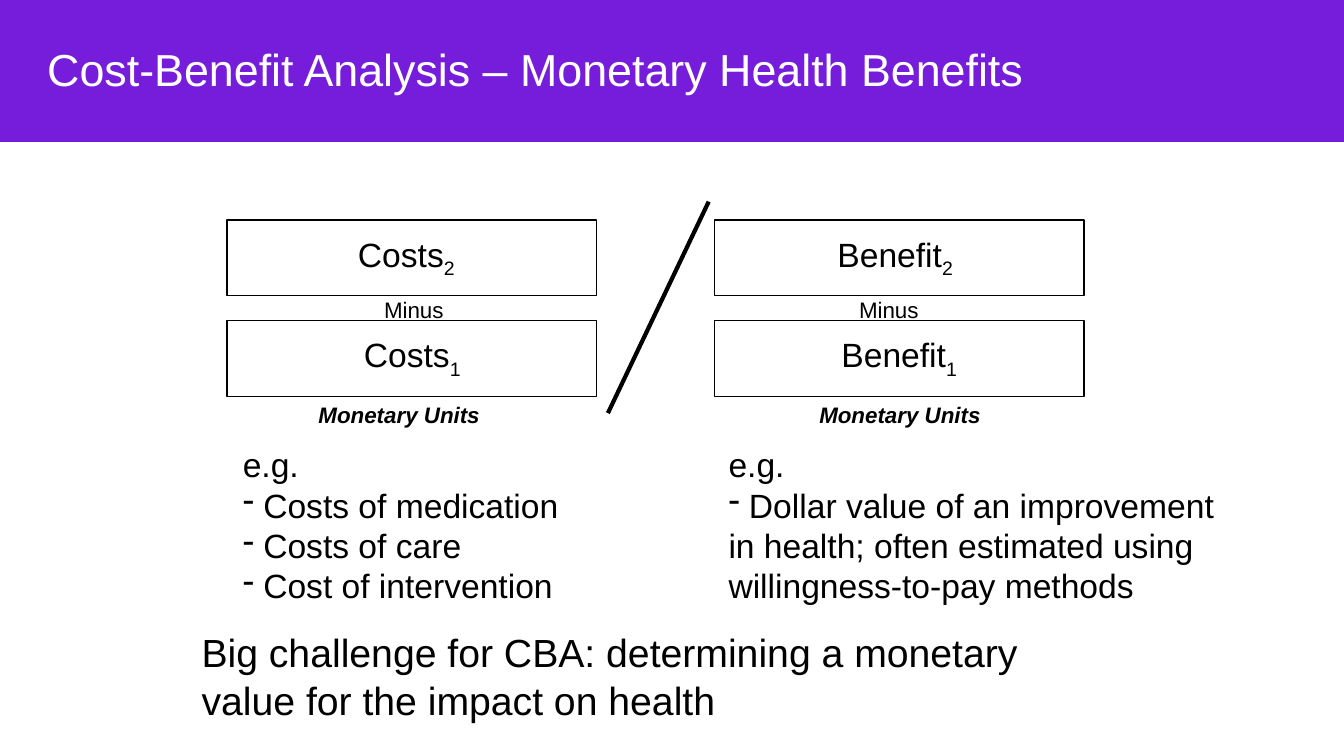
"""Build the slide on cost-benefit analysis with monetary health benefits."""
import pptx
import pptx.dml.color
import pptx.enum.shapes
import pptx.enum.text
import pptx.oxml
import pptx.util
from lxml import etree

Cm, Pt = pptx.util.Cm, pptx.util.Pt
PP_ALIGN = pptx.enum.text.PP_ALIGN
ANCHOR = pptx.enum.text.MSO_ANCHOR
RECT = pptx.enum.shapes.MSO_SHAPE.RECTANGLE
STRAIGHT = pptx.enum.shapes.MSO_CONNECTOR.STRAIGHT

COLORS = {"band": "751DDB", "title": "FFFFFF", "ink": "000000"}
TITLE = "Cost-Benefit Analysis – Monetary Health Benefits"
CHALLENGE = "Big challenge for CBA: determining a monetary value for the impact on health"
COLUMNS = [
    {
        "left": 5.72,
        "term": "Costs",
        "centers": {"2": 10.24, "1": 10.39, "minus": 10.43, "units": 10.06},
        "list": (5.87, 9),
        "examples": ["Costs of medication", "Costs of care", "Cost of intervention"],
    },
    {
        "left": 18,
        "term": "Benefit",
        "centers": {"2": 22.56, "1": 22.66, "minus": 22.4, "units": 22.68},
        "list": (18.11, 12.9),
        "examples": ["Dollar value of an improvement in health; often estimated "
                     "using willingness-to-pay methods"],
    },
]
BOX_TOPS = {"2": 5.54, "1": 8.08}
BOX_W, BOX_H = 9.32, 1.91
LABEL_DROP, LABEL_H = 0.22, 1.27
CAPTION_W, CAPTION_H = 7.62, 0.94
CAPTIONS = [("minus", "Minus", 7.34, {}),
            ("units", "Monetary Units", 9.98, {"bold": True, "italic": True})]
LIST_TOP, LIST_H = 11.07, 4.37


def color(name):
    return pptx.dml.color.RGBColor.from_string(COLORS[name])


def write(p, text, size, ink="ink", **fmt):
    r = p.add_run()
    r.text = text
    for key, value in {"name": "Arial", "size": Pt(size), **fmt}.items():
        setattr(r.font, key, value)
    r.font.color.rgb = color(ink)
    return r


def add_text(s, left, top, width, height, align=PP_ALIGN.LEFT):
    tf = s.shapes.add_textbox(Cm(left), Cm(top), Cm(width), Cm(height)).text_frame
    tf.word_wrap = True
    tf.paragraphs[0].alignment = align
    return tf


def add_box(s, left, top, width, height, fill=None):
    sp = s.shapes.add_shape(RECT, Cm(left), Cm(top), Cm(width), Cm(height))
    sp.shadow.inherit = False
    if fill:
        sp.fill.solid()
        sp.fill.fore_color.rgb = color(fill)
        sp.line.fill.background()
    else:
        sp.fill.background()
        sp.line.color.rgb = color("ink")
        sp.line.width = Pt(1)
    return sp


def add_title(s, width):
    title = s.shapes.title
    title.element.addprevious(add_box(s, 0, 0, width, 3.58, "band").element)
    place = {"left": 1.19, "top": 0.36, "width": 31.09, "height": 2.9}
    for key, value in place.items():
        setattr(title, key, Cm(value))
    tf = title.text_frame
    frame = dict.fromkeys(("margin_left", "margin_top", "margin_right", "margin_bottom"), 0)
    for key, value in {**frame, "vertical_anchor": ANCHOR.MIDDLE, "word_wrap": True}.items():
        setattr(tf, key, value)
    p = tf.paragraphs[0]
    p.alignment, p.line_spacing = PP_ALIGN.LEFT, 0.9
    write(p, TITLE, 32, "title")


def add_column(s, column):
    centers = column["centers"]
    for index, top in BOX_TOPS.items():
        add_box(s, column["left"], top, BOX_W, BOX_H)
        tf = add_text(s, centers[index] - CAPTION_W / 2, top + LABEL_DROP,
                      CAPTION_W, LABEL_H, PP_ALIGN.CENTER)
        write(tf.paragraphs[0], column["term"], 24)
        r = write(tf.paragraphs[0], index, 24)
        r.font.element.set("baseline", "-25000") if hasattr(r.font, "element") else \
            r._r.get_or_add_rPr().set("baseline", "-25000")
    for key, text, top, fmt in CAPTIONS:
        tf = add_text(s, centers[key] - CAPTION_W / 2, top,
                      CAPTION_W, CAPTION_H, PP_ALIGN.CENTER)
        write(tf.paragraphs[0], text, 16, **fmt)
    left, width = column["list"]
    tf = add_text(s, left, LIST_TOP, width, LIST_H)
    write(tf.paragraphs[0], "e.g.", 24)
    for example in column["examples"]:
        p = tf.add_paragraph()
        write(p, " " + example, 24)
        pPr = p._p.get_or_add_pPr()
        etree.SubElement(pPr, pptx.oxml.ns.qn("a:buChar")).set("char", "-")


def add_slash(s):
    line = s.shapes.add_connector(STRAIGHT, Cm(15.32), Cm(10.41), Cm(17.86), Cm(5.08))
    line.line.color.rgb = color("ink")
    line.line.width = Pt(3)
    etree.SubElement(line.element.spPr, pptx.oxml.ns.qn("a:effectLst"))


def main():
    prs = pptx.Presentation()
    prs.slide_width, prs.slide_height = Cm(33.87), Cm(19.05)
    s = prs.slides.add_slide(prs.slide_layouts[5])
    add_title(s, 33.87)
    for column in COLUMNS:
        add_column(s, column)
    add_slash(s)
    tf = add_text(s, 4.83, 15.72, 22.63, 2.64)
    write(tf.paragraphs[0], CHALLENGE, 28)
    prs.save("out.pptx")


if __name__ == "__main__":
    main()
